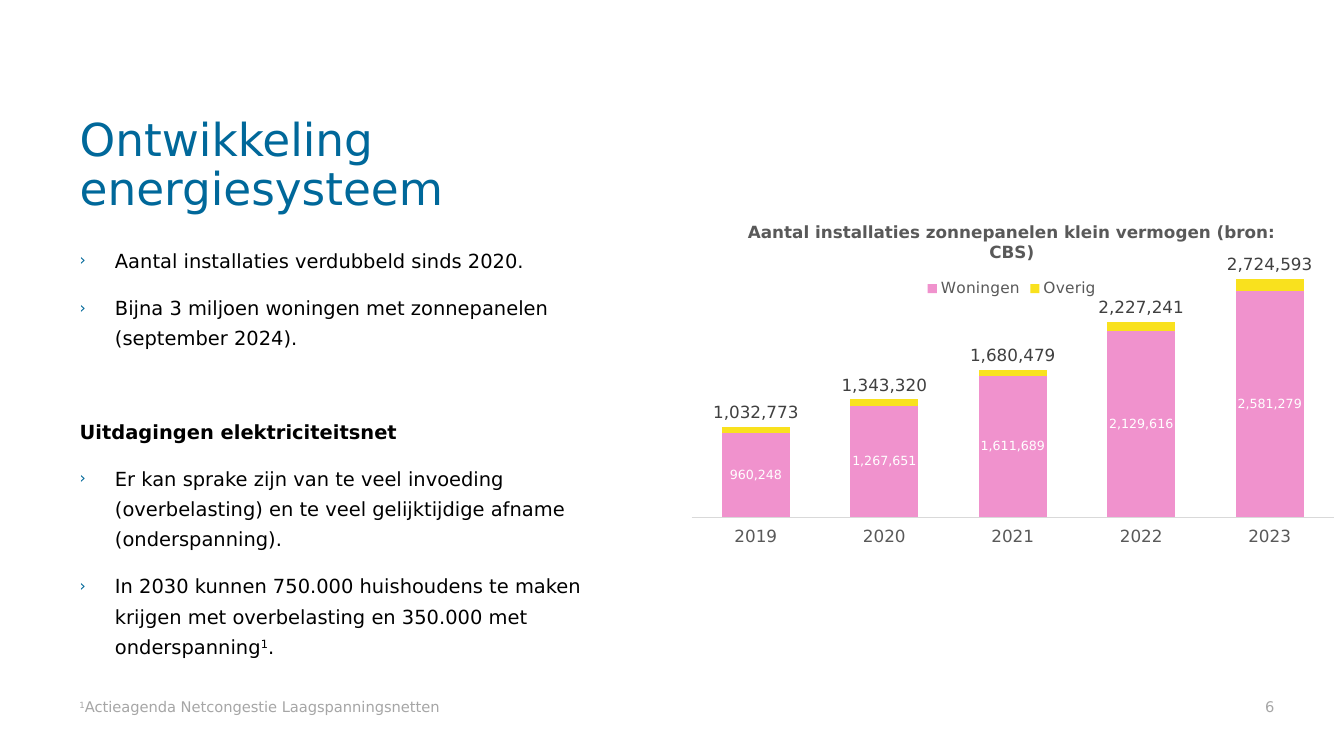
from dataclasses import dataclass

from lxml import etree
from pptx import Presentation
from pptx.chart.chart import Chart
from pptx.chart.data import CategoryChartData
from pptx.dml.color import RGBColor
from pptx.enum.chart import (XL_CHART_TYPE, XL_LABEL_POSITION, XL_LEGEND_POSITION,
                             XL_MARKER_STYLE, XL_TICK_LABEL_POSITION, XL_TICK_MARK)
from pptx.enum.text import MSO_ANCHOR, MSO_AUTO_SIZE, PP_ALIGN
from pptx.oxml import parse_xml
from pptx.oxml.ns import qn
from pptx.util import Inches, Pt

STACKED, CENTER, ABOVE = XL_CHART_TYPE.COLUMN_STACKED, XL_LABEL_POSITION.CENTER, XL_LABEL_POSITION.ABOVE
LEGEND_TOP, NO_MARKER = XL_LEGEND_POSITION.TOP, XL_MARKER_STYLE.NONE
NO_TICK, LOW = XL_TICK_MARK.NONE, XL_TICK_LABEL_POSITION.LOW
TOP, BOTTOM, NO_FIT = MSO_ANCHOR.TOP, MSO_ANCHOR.BOTTOM, MSO_AUTO_SIZE.NONE
LEFT, MIDDLE, RIGHT = PP_ALIGN.LEFT, PP_ALIGN.CENTER, PP_ALIGN.RIGHT

FONT = "DejaVu Sans"
CHART_NS = "http://schemas.openxmlformats.org/drawingml/2006/chart"
COLORS = {"heading": "00689A", "body": "000000", "footer": "A6A6A6", "axis": "595959",
          "axis_line": "D9D9D9", "total": "404040", "white": "FFFFFF",
          "Woningen": "F092CD", "Overig": "F9E11E"}
COLUMN_LEFT, COLUMN_WIDTH = 0.69, 5.47


@dataclass
class Point:
    """A paragraph of the body; a part after ^ is a superscript digit."""
    text: str
    bullet: bool = True
    before: float = 12


POINTS = [
    Point("Aantal installaties verdubbeld sinds 2020.", before=0),
    Point("Bijna 3 miljoen woningen met zonnepanelen (september 2024)."),
    Point("Uitdagingen elektriciteitsnet", bullet=False, before=45),
    Point("Er kan sprake zijn van te veel invoeding (overbelasting) en te veel "
          "gelijktijdige afname (onderspanning)."),
    Point("In 2030 kunnen 750.000 huishoudens te maken krijgen met overbelasting "
          "en 350.000 met onderspanning^1."),
]
YEARS = ["2019", "2020", "2021", "2022", "2023"]
INSTALLATIONS = {
    "Woningen": [960248, 1267651, 1611689, 2129616, 2581279],
    "Overig": [70000, 80000, 70000, 100000, 140000],
    "Series 3": [1032773, 1343320, 1680479, 2227241, 2724593],
}


def rgb(name: str) -> RGBColor:
    """Look up a named colour."""
    return RGBColor.from_string(COLORS[name])


def style(font, size: float, color: str, bold: bool = False) -> None:
    """Format a font."""
    font.name, font.size, font.bold = FONT, Pt(size), bold
    font.color.rgb = rgb(color)


def write(paragraph, text: str, size: float, color: str, bold: bool = False,
          align=LEFT, spacing: float = 1.0, before: float = 0) -> None:
    """Write text into a paragraph, raising the digit that follows ^."""
    paragraph.alignment, paragraph.line_spacing = align, spacing
    paragraph.space_before = Pt(before)
    plain, _, raised = text.partition("^")
    for part, baseline in ((plain, 0), (raised[:1], 30000), (raised[1:], 0)):
        if part:
            run = paragraph.add_run()
            run.text = part
            style(run.font, size, color, bold)
            if baseline:
                run.font._element.set("baseline", str(baseline))


def place(shape, left: float, top: float, width: float, height: float, anchor):
    """Position a text shape and return its text frame."""
    shape.left, shape.top = Inches(left), Inches(top)
    shape.width, shape.height = Inches(width), Inches(height)
    frame = shape.text_frame
    frame.word_wrap, frame.auto_size, frame.vertical_anchor = True, NO_FIT, anchor
    return frame


def set_bullet(paragraph, shown: bool) -> None:
    """Give a paragraph the coloured bullet with a hanging indent, or none."""
    props = paragraph._p.get_or_add_pPr()
    indent = Inches(0.35) if shown else 0
    props.set("marL", str(indent))
    props.set("indent", str(-indent))
    if not shown:
        etree.SubElement(props, qn("a:buNone"))
        return
    color = etree.SubElement(props, qn("a:buClr"))
    etree.SubElement(color, qn("a:srgbClr"), val=COLORS["heading"])
    etree.SubElement(props, qn("a:buSzPct"), val="80000")
    etree.SubElement(props, qn("a:buFont"), typeface=FONT)
    etree.SubElement(props, qn("a:buChar"), char="›")


def add_footer(slide, text: str, left: float, align):
    """Add a small grey footer text."""
    box = slide.shapes.add_textbox(0, 0, 0, 0)
    frame = place(box, left, 6.8, COLUMN_WIDTH, 0.35, BOTTOM)
    write(frame.paragraphs[0], text, 10.5, "footer", align=align)
    return frame


def move_totals_to_line(chart: Chart) -> None:
    """Turn the last column series into a line on the same axes."""
    bars = chart.plots[0]._element
    totals = bars.findall(qn("c:ser"))[-1]
    for bar_only in totals.findall(qn("c:invertIfNegative")):
        totals.remove(bar_only)
    line = parse_xml(f'<c:lineChart xmlns:c="{CHART_NS}"><c:grouping val="standard"/></c:lineChart>')
    line.append(totals)
    for axis in bars.findall(qn("c:axId")):
        etree.SubElement(line, qn("c:axId"), val=axis.get("val"))
    bars.addnext(line)


def set_plot_layout(chart: Chart, x: float, y: float, w: float, h: float) -> None:
    """Fix the inner plot area as fractions of the chart."""
    area = chart._chartSpace.find(".//" + qn("c:plotArea"))
    for old in area.findall(qn("c:layout")):
        area.remove(old)
    layout = etree.Element(qn("c:layout"))
    manual = etree.SubElement(layout, qn("c:manualLayout"))
    for tag, value in (("layoutTarget", "inner"), ("xMode", "edge"), ("yMode", "edge"),
                       ("x", x), ("y", y), ("w", w), ("h", h)):
        etree.SubElement(manual, qn("c:" + tag), val=str(value))
    area.insert(0, layout)


def add_legend(chart: Chart) -> None:
    """Show the legend on top without the totals."""
    chart.has_legend = True
    legend = chart.legend
    legend.position, legend.include_in_layout = LEGEND_TOP, True
    style(legend.font, 11, "axis")
    entry = etree.Element(qn("c:legendEntry"))
    etree.SubElement(entry, qn("c:idx"), val="2")
    etree.SubElement(entry, qn("c:delete"), val="1")
    legend._element.find(qn("c:legendPos")).addnext(entry)


def label_values(series, size: float, color: str, position) -> None:
    """Show the values of a series."""
    labels = series.data_labels
    labels.show_value, labels.position = True, position
    labels.number_format, labels.number_format_is_linked = "#,##0", False
    style(labels.font, size, color)


def add_installations_chart(slide) -> None:
    """Add the stacked columns with their totals."""
    data = CategoryChartData(number_format="#,##0")
    data.categories = YEARS
    for name, values in INSTALLATIONS.items():
        data.add_series(name, values)
    chart = slide.shapes.add_chart(STACKED, Inches(6.7), Inches(2.04), Inches(6.67),
                                   Inches(3.42), data).chart
    style(chart.font, 10, "body")
    chart.has_title = True
    write(chart.chart_title.text_frame.paragraphs[0],
          "Aantal installaties zonnepanelen klein vermogen (bron: CBS)",
          12, "axis", bold=True, align=MIDDLE)
    move_totals_to_line(chart)
    columns, totals_plot = chart.plots
    columns.gap_width, columns.overlap = 89, 100
    columns.vary_by_categories = totals_plot.vary_by_categories = False
    for series in columns.series:
        series.format.fill.solid()
        series.format.fill.fore_color.rgb = rgb(series.name)
    label_values(columns.series[0], 9, "white", CENTER)
    totals = totals_plot.series[0]
    totals.smooth, totals.marker.style = False, NO_MARKER
    totals.format.line.fill.background()
    label_values(totals, 12, "total", ABOVE)
    years, amounts = chart.category_axis, chart.value_axis
    years.major_tick_mark, years.tick_label_position = NO_TICK, LOW
    style(years.tick_labels.font, 12, "axis")
    years.format.line.color.rgb, years.format.line.width = rgb("axis_line"), Pt(0.75)
    amounts.visible = amounts.has_major_gridlines = False
    amounts.minimum_scale, amounts.maximum_scale = 0, 3000000
    add_legend(chart)
    set_plot_layout(chart, 0.024, 0.142, 0.955, 0.762)


def main() -> None:
    """Build the slide and save it."""
    deck = Presentation()
    deck.slide_width, deck.slide_height = Inches(13.33), Inches(7.5)
    slide = deck.slides.add_slide(deck.slide_layouts[1])
    heading = place(slide.shapes.title, COLUMN_LEFT, 1.15, COLUMN_WIDTH, 1.04, BOTTOM)
    write(heading.paragraphs[0], "Ontwikkeling energiesysteem", 32.4, "heading", spacing=0.9)
    body = place(slide.placeholders[1], COLUMN_LEFT, 2.35, COLUMN_WIDTH, 4.3, TOP)
    for index, point in enumerate(POINTS):
        paragraph = body.add_paragraph() if index else body.paragraphs[0]
        set_bullet(paragraph, point.bullet)
        write(paragraph, point.text, 13.9, "body", bold=not point.bullet,
              spacing=1.3, before=point.before)
    add_footer(slide, "^1Actieagenda Netcongestie Laagspanningsnetten", COLUMN_LEFT, LEFT)
    add_footer(slide, "6", 7.17, RIGHT).margin_right = 0
    add_installations_chart(slide)
    deck.save("out.pptx")


if __name__ == "__main__":
    main()
